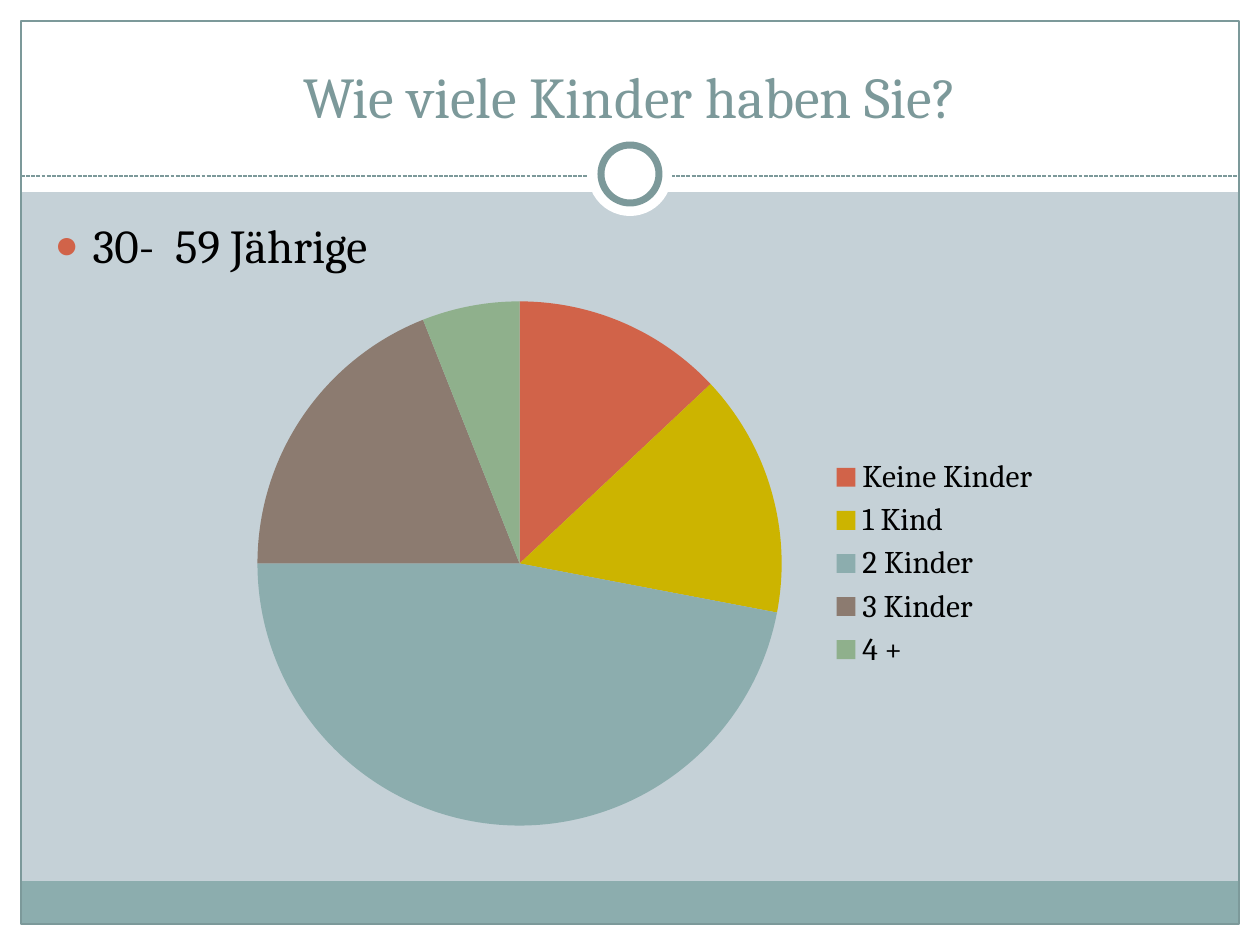
from lxml.etree import SubElement
from pptx import Presentation
from pptx.chart.data import CategoryChartData
from pptx.dml.color import RGBColor
from pptx.enum.chart import XL_CHART_TYPE as ChartType, XL_LEGEND_POSITION as LegendPosition
from pptx.enum.dml import MSO_LINE as Dash
from pptx.enum.shapes import MSO_CONNECTOR as Connector, MSO_SHAPE as Shape
from pptx.enum.text import MSO_ANCHOR as Anchor, MSO_AUTO_SIZE as AutoSize, PP_ALIGN as Align
from pptx.oxml.ns import qn
from pptx.util import Emu, Pt

PX = 914400 / 126
WIDTH, HEIGHT, MARGIN = 1260, 945, 21
FONT = "Cambria"

BLACK = RGBColor(0x00, 0x00, 0x00)
WHITE = RGBColor(0xFF, 0xFF, 0xFF)
BACKGROUND = RGBColor(0xC5, 0xD1, 0xD7)
SLATE = RGBColor(0x7C, 0x99, 0x9A)
RED = RGBColor(0xD1, 0x63, 0x49)
YELLOW = RGBColor(0xCC, 0xB4, 0x00)
TEAL = RGBColor(0x8C, 0xAD, 0xAE)
BROWN = RGBColor(0x8C, 0x7B, 0x70)
GREEN = RGBColor(0x8F, 0xB0, 0x8C)

ANSWERS = [
    ("Keine Kinder", 13, RED),
    ("1 Kind", 15, YELLOW),
    ("2 Kinder", 47, TEAL),
    ("3 Kinder", 19, BROWN),
    ("4 +", 6, GREEN),
]


def px(length):
    return Emu(round(length * PX))


def scaled(*lengths):
    return [px(length) for length in lengths]


def apply_format(target, values):
    for name, value in values.items():
        setattr(target, name, value)


def format_font(font, size, color):
    apply_format(font, {"name": FONT, "size": Pt(size)})
    font.color.rgb = color


def format_line(line, values):
    line.color.rgb = SLATE
    apply_format(line, values)


def add_panel(page, kind, bounds, fill=None, line_width=None):
    panel = page.shapes.add_shape(kind, *scaled(*bounds))
    panel.shadow.inherit = False
    if fill is None:
        panel.fill.background()
    else:
        panel.fill.solid()
        panel.fill.fore_color.rgb = fill
    if line_width is None:
        panel.line.fill.background()
    else:
        format_line(panel.line, {"width": Pt(line_width)})


def add_divider(page, y):
    divider = page.shapes.add_connector(
        Connector.STRAIGHT, *scaled(MARGIN, y, WIDTH - MARGIN, y))
    format_line(divider.line, {"width": Pt(0.75), "dash_style": Dash.SQUARE_DOT})
    SubElement(divider.element.spPr, qn("a:effectLst"))


def add_frame(page):
    inner_width = WIDTH - 2 * MARGIN
    for bounds in (
        (0, HEIGHT - MARGIN, WIDTH, MARGIN),
        (0, 0, WIDTH, 192),
        (0, 0, MARGIN, HEIGHT),
        (WIDTH - MARGIN, 0, MARGIN, HEIGHT),
    ):
        add_panel(page, Shape.RECTANGLE, bounds, WHITE)
    add_panel(page, Shape.RECTANGLE, (MARGIN, 881, inner_width, 43), TEAL)
    add_panel(page, Shape.RECTANGLE,
              (MARGIN, MARGIN, inner_width, HEIGHT - 2 * MARGIN), line_width=0.75)
    add_divider(page, 176)
    for diameter, line_width in ((84, None), (58, 4)):
        add_panel(page, Shape.OVAL,
                  ((WIDTH - diameter) / 2, 174 - diameter / 2, diameter, diameter),
                  WHITE, line_width)


def fill_placeholder(box, bounds, text, size, color, anchor, align):
    box.element.getparent().append(box.element)
    apply_format(box, dict(zip(("left", "top", "width", "height"), scaled(*bounds))))
    apply_format(box.text_frame, {
        "word_wrap": True, "auto_size": AutoSize.NONE, "vertical_anchor": anchor})
    para = box.text_frame.paragraphs[0]
    para.alignment = align
    span = para.add_run()
    span.text = text
    format_font(span.font, size, color)
    return para


def add_bullet(para, color, indent):
    properties = para._p.get_or_add_pPr()
    properties.set("marL", str(px(indent)))
    properties.set("indent", str(-px(indent)))
    before = SubElement(properties, qn("a:spcBef"))
    SubElement(before, qn("a:spcPct"), val="20000")
    bullet_color = SubElement(properties, qn("a:buClr"))
    SubElement(bullet_color, qn("a:srgbClr"), val=str(color))
    SubElement(properties, qn("a:buSzPct"), val="85000")
    SubElement(properties, qn("a:buChar"), char="●")


def add_pie(page, bounds):
    labels, values, colors = zip(*ANSWERS)
    data = CategoryChartData()
    data.categories = labels
    data.add_series("Series 1", values)
    chart = page.shapes.add_chart(ChartType.PIE, *scaled(*bounds), data).chart
    apply_format(chart, {"has_title": False, "has_legend": True})
    apply_format(chart.legend, {
        "position": LegendPosition.RIGHT, "include_in_layout": False})
    format_font(chart.font, 18, BLACK)
    plot = chart.plots[0]
    plot.vary_by_categories = True
    for index, color in enumerate(colors):
        slice_format = plot.series[0].points[index].format
        slice_format.fill.solid()
        slice_format.fill.fore_color.rgb = color
        slice_format.line.fill.background()


def main():
    deck = Presentation()
    apply_format(deck, {"slide_width": px(WIDTH), "slide_height": px(HEIGHT)})
    page = deck.slides.add_slide(deck.slide_layouts[1])
    page.background.fill.solid()
    page.background.fill.fore_color.rgb = BACKGROUND
    add_frame(page)
    fill_placeholder(page.shapes.title, (42, 32, 1176, 104),
                     "Wie viele Kinder haben Sie?", 33, SLATE, Anchor.BOTTOM, Align.CENTER)
    age_group = fill_placeholder(page.placeholders[1], (42, 210, 1172, 630),
                                 "30-  59 Jährige", 27, BLACK, Anchor.TOP, Align.LEFT)
    add_bullet(age_group, RED, 38)
    add_pie(page, (213, 284, 840, 559))
    deck.save("out.pptx")


if __name__ == "__main__":
    main()
